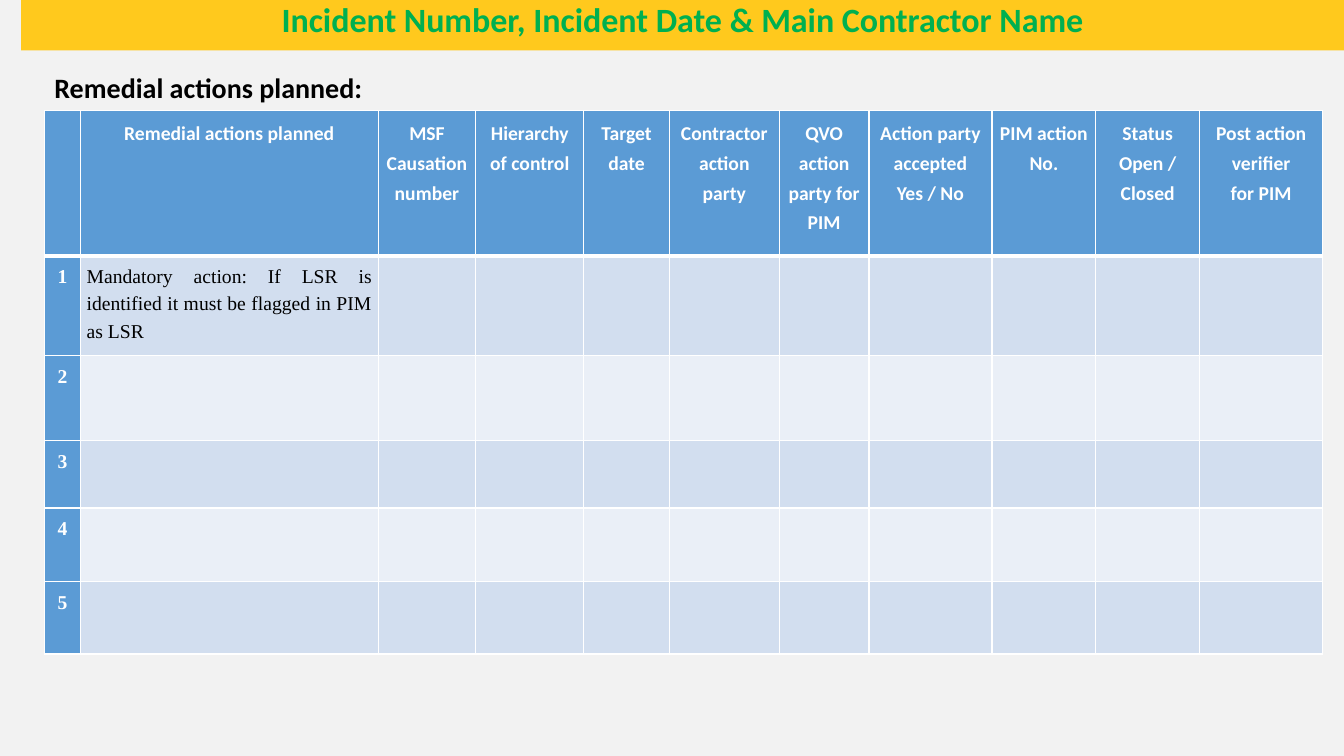
import pptx
import pptx.util
import pptx.dml.color
import pptx.enum.text
from lxml import etree

Inches = pptx.util.Inches
Pt = pptx.util.Pt
Align = pptx.enum.text.PP_ALIGN
Anchor = pptx.enum.text.MSO_ANCHOR

hues = {
    "back": "F2F2F2",
    "gold": "FFC91D",
    "green": "00B050",
    "black": "000000",
    "white": "FFFFFF",
    "blue": "5B9BD5",
    "dark": "D2DEEF",
    "light": "EAEFF7",
}
widths = [0.36, 2.95, 0.97, 1.07, 0.85, 1.09, 0.89, 1.22, 1.03, 1.03, 1.22]
heights = [1.44, 0.99, 0.84, 0.67, 0.73, 0.72]
heads = [
    "",
    "Remedial actions planned",
    "MSF Causation number",
    "Hierarchy of control",
    "Target date",
    "Contractor action party",
    "QVO action party for PIM",
    "Action party accepted\nYes / No",
    "PIM action No.",
    "Status\nOpen / Closed",
    "Post action verifier\nfor PIM",
]
task = "Mandatory action: If LSR is identified it must be flagged in PIM as LSR"
blanks = [""] * (len(heads) - 2)
rows = [heads, ["1", task] + blanks]
rows += [[str(n), ""] + blanks for n in range(2, len(heights))]


def style(frame, size, face, hue, bold, align, space):
    for para in frame.paragraphs:
        para.alignment = align
        para.line_spacing = space
        for run in para.runs:
            run.font.size = Pt(size)
            run.font.name = face
            run.font.bold = bold
            run.font.color.rgb = pptx.dml.color.RGBColor.from_string(hues[hue])


def paint(fill, hue):
    fill.solid()
    fill.fore_color.rgb = pptx.dml.color.RGBColor.from_string(hues[hue])


deck = pptx.Presentation()
deck.slide_width = Inches(13.33)
deck.slide_height = Inches(7.5)
slide = deck.slides.add_slide(deck.slide_layouts[5])
paint(slide.background.fill, "back")

title = slide.shapes.title
title.left, title.top = Inches(0.21), Inches(0)
title.width, title.height = Inches(13.12), Inches(0.5)
paint(title.fill, "gold")
frame = title.text_frame
frame.text = "Incident Number, Incident Date & Main Contractor Name"
frame.auto_size = pptx.enum.text.MSO_AUTO_SIZE.NONE
frame.vertical_anchor = Anchor.MIDDLE
frame.margin_top, frame.margin_bottom = Inches(0), Inches(0.08)
style(frame, 24.3, "Calibri", "green", True, Align.CENTER, 0.9)

label = slide.shapes.add_textbox(Inches(0.44), Inches(0.65), Inches(7.11), Inches(0.44))
frame = label.text_frame
frame.word_wrap = True
frame.auto_size = pptx.enum.text.MSO_AUTO_SIZE.SHAPE_TO_FIT_TEXT
frame.text = "Remedial actions planned:"
style(frame, 20, "Calibri", "black", True, Align.LEFT, 1.0)

table = slide.shapes.add_table(
    len(rows), len(heads), Inches(0.44), Inches(1.1),
    Inches(sum(widths)), Inches(sum(heights)),
).table
for col, width in zip(table.columns, widths):
    col.width = Inches(width)
for row, height in zip(table.rows, heights):
    row.height = Inches(height)

space = "http://schemas.openxmlformats.org/drawingml/2006/main"
for r, words in enumerate(rows):
    for c, text in enumerate(words):
        cell = table.cell(r, c)
        cell.margin_left = cell.margin_right = Inches(0.06)
        cell.margin_top = cell.margin_bottom = Inches(0.05)
        props = cell._tc.get_or_add_tcPr()
        for side in "LRTB":
            thick = 3 if (r, side) in [(0, "B"), (1, "T")] else 1
            line = etree.SubElement(props, f"{{{space}}}ln{side}", w=str(Pt(thick)))
            fill = etree.SubElement(line, f"{{{space}}}solidFill")
            etree.SubElement(fill, f"{{{space}}}srgbClr", val=hues["white"])
        edge = r == 0 or c == 0
        paint(cell.fill, "blue" if edge else "dark" if r % 2 else "light")
        if text:
            cell.text_frame.text = text
            style(
                cell.text_frame, 14,
                "Calibri" if r == 0 else "Times New Roman",
                "white" if edge else "black", edge,
                Align.CENTER if edge else Align.JUSTIFY, 1.25,
            )

deck.save("out.pptx")
